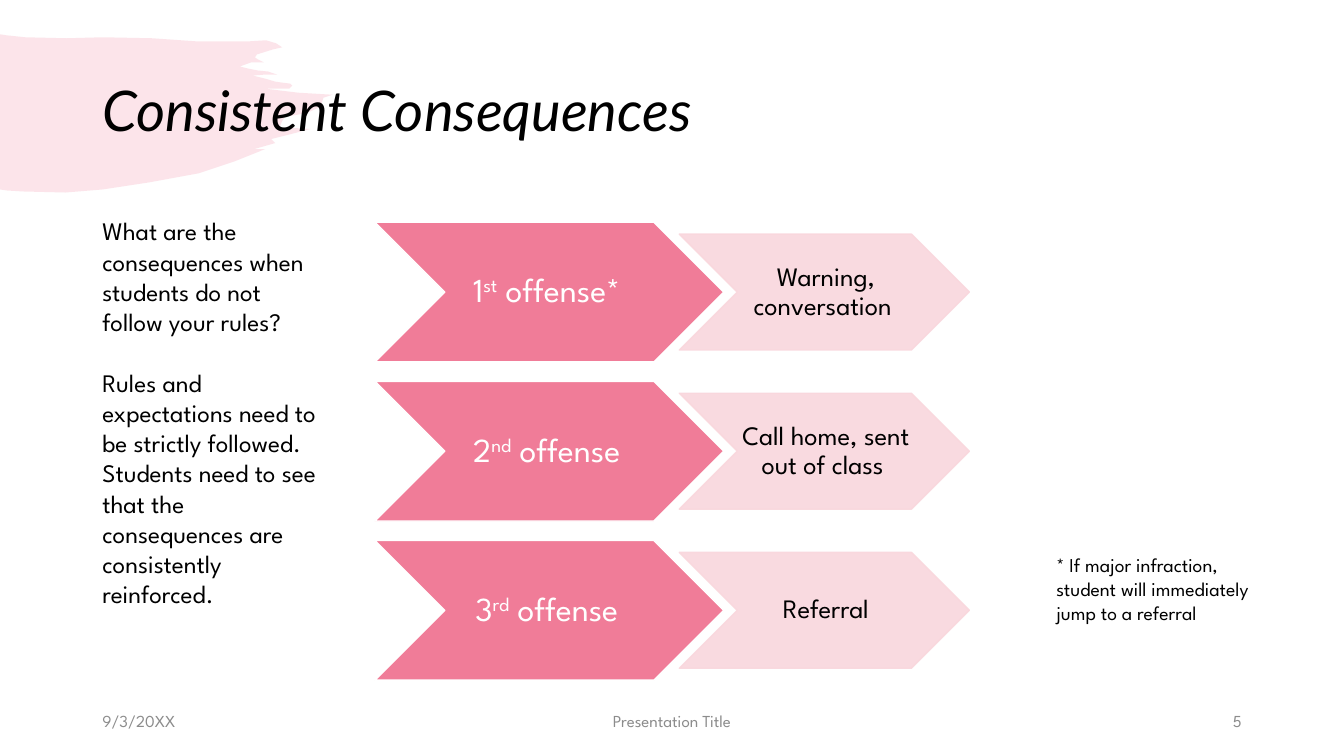
from lxml import etree
from pptx import Presentation
from pptx.dml.color import RGBColor
from pptx.enum.shapes import MSO_SHAPE
from pptx.enum.text import MSO_ANCHOR, PP_ALIGN
from pptx.oxml.ns import qn
from pptx.util import Cm, Pt

CHEVRON = MSO_SHAPE.CHEVRON
TOP, MIDDLE = MSO_ANCHOR.TOP, MSO_ANCHOR.MIDDLE
LEFT, CENTER, RIGHT = PP_ALIGN.LEFT, PP_ALIGN.CENTER, PP_ALIGN.RIGHT

BRUSH_UNIT = Cm(2.54) / 100
BRUSH_OUTLINE = [
    (0, 34), (6, 35), (25, 37), (66, 38), (102, 37), (151, 38), (194, 41),
    (248, 41), (264, 40.5), (274, 43), (280, 47), (271, 49), (255, 54),
    (253, 57), (256, 59), (262, 62), (249, 62), (238, 66), (246, 68),
    (256, 70), (266, 71), (275, 74), (263, 74), (251, 75), (263, 78),
    (273, 81), (280, 82), (288, 83), (290, 85), (287, 88), (284, 88),
    (263, 88), (296, 92), (330, 94), (321, 97), (318, 106), (307, 111),
    (300, 113), (283, 116), (280, 120), (278, 125), (274, 128), (291, 127),
    (308, 128), (289, 133), (269, 138), (273, 142), (252, 148), (263, 148),
    (233, 160), (197, 172), (148, 181), (102, 188), (65, 191), (23, 190),
    (7, 189), (0, 188),
]


def color(value):
    return RGBColor.from_string(value)


def write(paragraph, text, font="League Spartan", size=18, ink="000000",
          italic=False, raised=False):
    span = paragraph.add_run()
    span.text = text
    span.font.name = font
    span.font.size = Pt(size)
    span.font.italic = italic
    span.font.color.rgb = color(ink)
    if raised:
        span.font._element.set("baseline", "30000")


class SlideBuilder:
    rose = "F07C98"
    blush = "F9D7DD"
    white = "FFFFFF"
    gray = "8C8C8C"

    def __init__(self, page):
        self.page = page

    def paint(self, shape, fill, line=None, opacity=100):
        shape.shadow.inherit = False
        shape.fill.solid()
        shape.fill.fore_color.rgb = color(fill)
        if line:
            shape.line.color.rgb = color(line)
            shape.line.width = Pt(1)
        else:
            shape.line.fill.background()
        if opacity < 100:
            for tint in shape._element.spPr.iter(qn("a:srgbClr")):
                etree.SubElement(tint, qn("a:alpha"), val=str(opacity * 1000))

    def brush(self):
        builder = self.page.shapes.build_freeform(*BRUSH_OUTLINE[0], scale=BRUSH_UNIT)
        builder.add_line_segments(BRUSH_OUTLINE[1:], close=True)
        self.paint(builder.convert_to_shape(), self.rose, opacity=20)

    def text(self, left, top, width, height, paragraphs, anchor=TOP,
             align=LEFT, spacing=None, gap=0, **style):
        box = self.page.shapes.add_textbox(Cm(left), Cm(top), Cm(width), Cm(height))
        frame = box.text_frame
        frame.word_wrap = True
        frame.vertical_anchor = anchor
        for index, content in enumerate(paragraphs):
            para = frame.add_paragraph() if index else frame.paragraphs[0]
            para.alignment = align
            para.line_spacing = spacing
            para.space_before = Pt(gap if index else 0)
            write(para, content, **style)

    def chevron(self, left, middle, width, height, spans, fill, line,
                opacity=100, **style):
        shape = self.page.shapes.add_shape(
            CHEVRON, Cm(left), Cm(middle - height / 2), Cm(width), Cm(height))
        self.paint(shape, fill, line, opacity)
        frame = shape.text_frame
        frame.word_wrap = True
        frame.vertical_anchor = MIDDLE
        frame.margin_left = Cm(0.08)
        frame.margin_right = Cm(0)
        frame.margin_top = frame.margin_bottom = Cm(0.04)
        para = frame.paragraphs[0]
        para.alignment = CENTER
        para.line_spacing = 0.9
        for content, raised in spans:
            write(para, content, raised=raised, **style)

    def consequence(self, middle, number, suffix, offense, response):
        self.chevron(9.45, middle, 8.79, 3.52,
                     [(number, False), (suffix, True), (offense, False)],
                     self.rose, self.white, size=24, ink=self.white)
        self.chevron(17.12, middle, 7.31, 2.92, [(response, False)],
                     self.blush, self.blush, opacity=90, size=19)


def main():
    deck = Presentation()
    deck.slide_width = Cm(33.87)
    deck.slide_height = Cm(19.05)
    slide = SlideBuilder(deck.slides.add_slide(deck.slide_layouts[6]))

    slide.brush()
    slide.text(2.33, 1.02, 29.21, 3.68, ["Consistent Consequences"], anchor=MIDDLE,
               spacing=0.9, font="Lato", size=40, italic=True)

    footers = [
        (2.33, 7.62, "9/3/20XX", LEFT),
        (11.22, 11.43, "Presentation Title", CENTER),
        (23.92, 7.62, "5", RIGHT),
    ]
    for left, width, content, align in footers:
        slide.text(left, 17.66, width, 1.01, [content], anchor=MIDDLE,
                   align=align, size=12, ink=slide.gray)

    consequences = [
        ("1", "st", " offense* ", "Warning, conversation "),
        ("2", "nd", " offense ", "Call home, sent out of class "),
        ("3", "rd", " offense ", "Referral"),
    ]
    for row, labels in enumerate(consequences):
        slide.consequence(7.36 + 4.01 * row, *labels)

    slide.text(2.33, 5.31, 6.1, 11.79, [
        "What are the consequences when students do not follow your rules?",
        "Rules and expectations need to be strictly followed. Students need to "
        "see that the consequences are consistently reinforced.",
    ], gap=21.6)
    slide.text(26.37, 13.82, 6.1, 2.64, [
        "* If major infraction, student will immediately jump to a referral",
    ], size=14)

    deck.save("out.pptx")


if __name__ == "__main__":
    main()
